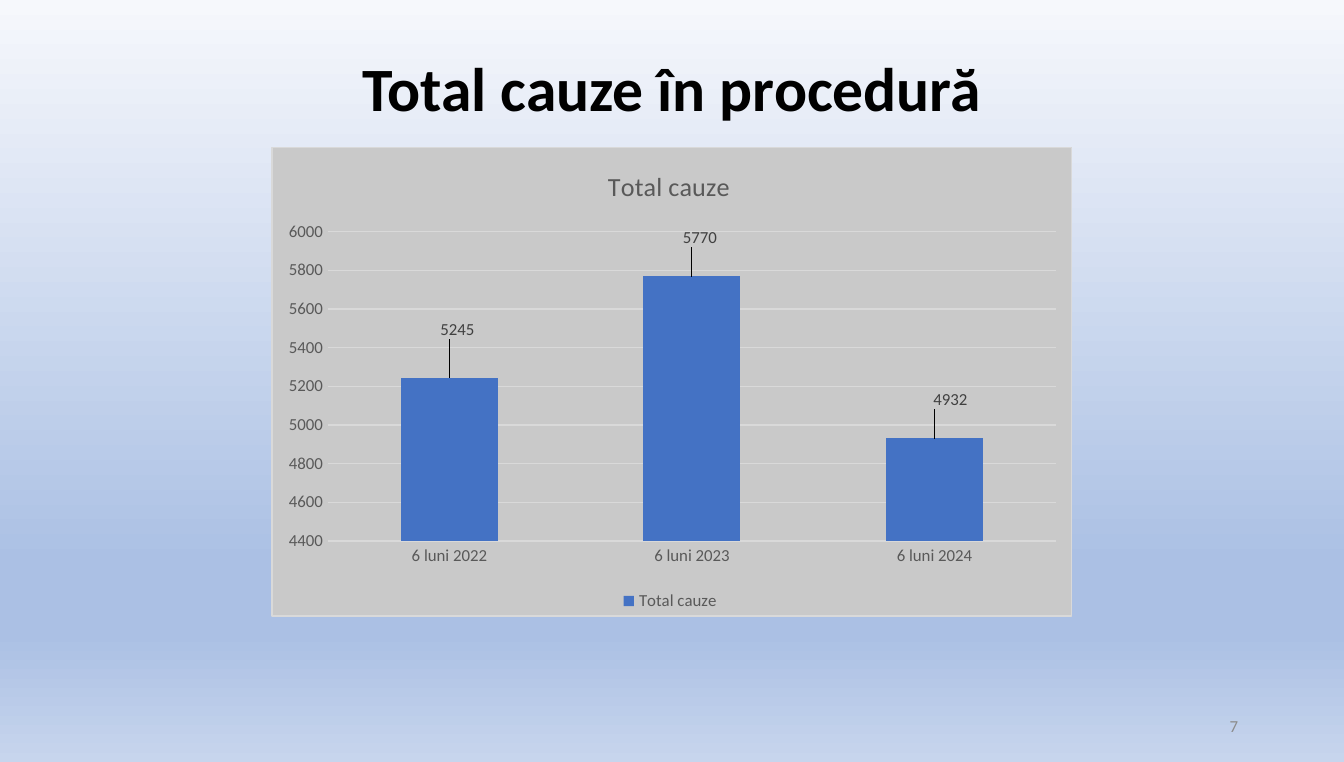
from copy import deepcopy

from lxml.etree import SubElement
from pptx import Presentation
from pptx.chart.data import CategoryChartData
from pptx.dml.color import RGBColor
from pptx.enum.chart import XL_CHART_TYPE, XL_LABEL_POSITION, XL_LEGEND_POSITION, XL_TICK_MARK
from pptx.enum.text import MSO_ANCHOR, PP_ALIGN
from pptx.oxml import parse_xml
from pptx.oxml.ns import nsdecls, qn
from pptx.util import Inches, Pt

COLORS = {
    "title": "000000",
    "number": "8C8C8C",
    "text": "595959",
    "label": "404040",
    "bar": "4472C4",
    "panel": "C9C9C9",
    "grid": "D9D9D9",
}
BACKGROUND_STOPS = [(0, "F6F8FC"), (0.74, "ABC0E4"), (0.83, "ABC0E4"), (1, "C7D5ED")]


def style_font(font, size, color, bold=False):
    for name, value in {"name": "Calibri", "size": Pt(size), "bold": bold}.items():
        setattr(font, name, value)
    font.color.rgb = RGBColor.from_string(COLORS[color])


def make_layout(values):
    layout = parse_xml(f"<c:layout {nsdecls('c')}/>")
    manual = SubElement(layout, qn("c:manualLayout"))
    for name, value in values.items():
        SubElement(manual, qn(f"c:{name}")).set("val", str(value))
    return layout


presentation = Presentation()
presentation.slide_width = Inches(10)
presentation.slide_height = Inches(5.67)
slide = presentation.slides.add_slide(presentation.slide_layouts[6])

background = slide.background.fill
background.gradient()
background.gradient_angle = 270
first_stop = background._fill._gradFill.find(qn("a:gsLst"))
for _ in range(len(BACKGROUND_STOPS) - len(first_stop)):
    first_stop.append(deepcopy(first_stop[0]))
for stop, (position, color) in zip(background.gradient_stops, BACKGROUND_STOPS):
    stop.position = position
    stop.color.rgb = RGBColor.from_string(color)

texts = [
    ("Total cauze în procedură", (0.5, 0.42, 9, 0.52), 33, "title", True, PP_ALIGN.CENTER),
    ("7", (7.06, 5.26, 2.25, 0.3), 9, "number", False, PP_ALIGN.RIGHT),
]
for text, box, size, color, bold, alignment in texts:
    frame = slide.shapes.add_textbox(*map(Inches, box)).text_frame
    frame.word_wrap = True
    frame.vertical_anchor = MSO_ANCHOR.MIDDLE
    paragraph = frame.paragraphs[0]
    paragraph.alignment = alignment
    paragraph.line_spacing = 0.9
    run = paragraph.add_run()
    run.text = text
    style_font(run.font, size, color, bold)

chart_data = CategoryChartData()
chart_data.categories = ["6 luni 2022", "6 luni 2023", "6 luni 2024"]
chart_data.add_series("Total cauze ", [5245, 5770, 4932])
chart = slide.shapes.add_chart(
    XL_CHART_TYPE.COLUMN_CLUSTERED, *map(Inches, (2.02, 1.09, 5.96, 3.5)), chart_data
).chart
style_font(chart.font, 10, "title")

chart.has_title = True
title_run = chart.chart_title.text_frame.paragraphs[0].add_run()
title_run.text = "Total cauze "
style_font(title_run.font, 14, "text")

chart.has_legend = True
chart.legend.position = XL_LEGEND_POSITION.BOTTOM
chart.legend.include_in_layout = False
style_font(chart.legend.font, 9, "text")

for axis in (chart.category_axis, chart.value_axis):
    axis.major_tick_mark = XL_TICK_MARK.NONE
    axis.minor_tick_mark = XL_TICK_MARK.NONE
    axis.format.line.fill.background()
    style_font(axis.tick_labels.font, 9, "text")
for name, value in {"minimum_scale": 4400, "maximum_scale": 6000, "major_unit": 200}.items():
    setattr(chart.value_axis, name, value)
gridline = chart.value_axis.major_gridlines.format.line
gridline.width = Pt(0.75)
gridline.color.rgb = RGBColor.from_string(COLORS["grid"])

plot = chart.plots[0]
plot.gap_width = 150
plot.vary_by_categories = False
series = plot.series[0]
series.format.fill.solid()
series.format.fill.fore_color.rgb = RGBColor.from_string(COLORS["bar"])
series.data_labels.show_value = True
style_font(series.data_labels.font, 9, "label")
for index, (x, y) in enumerate([(0.01, -0.07), (0.01, -0.05), (0.02, -0.05)]):
    label = series.points[index].data_label
    style_font(label.font, 9, "label")
    label.position = XL_LABEL_POSITION.OUTSIDE_END
    label_index = series._element.findall(f".//{qn('c:dLbl')}/{qn('c:idx')}")[index]
    label_index.addnext(make_layout({"x": x, "y": y}))

chart_element = chart._chartSpace.find(qn("c:chart"))
plot_area = chart_element.find(qn("c:plotArea"))
for layout in plot_area.findall(qn("c:layout")):
    plot_area.remove(layout)
plot_area.insert(0, make_layout({
    "layoutTarget": "inner", "xMode": "edge", "yMode": "edge",
    "x": 0.07, "y": 0.18, "w": 0.91, "h": 0.66,
}))
chart_element.addnext(parse_xml(
    f'<c:spPr {nsdecls("c", "a")}>'
    f'<a:solidFill><a:srgbClr val="{COLORS["panel"]}"/></a:solidFill>'
    f'<a:ln w="{Pt(0.75)}"><a:solidFill><a:srgbClr val="{COLORS["grid"]}"/></a:solidFill></a:ln>'
    "</c:spPr>"
))

presentation.save("out.pptx")
